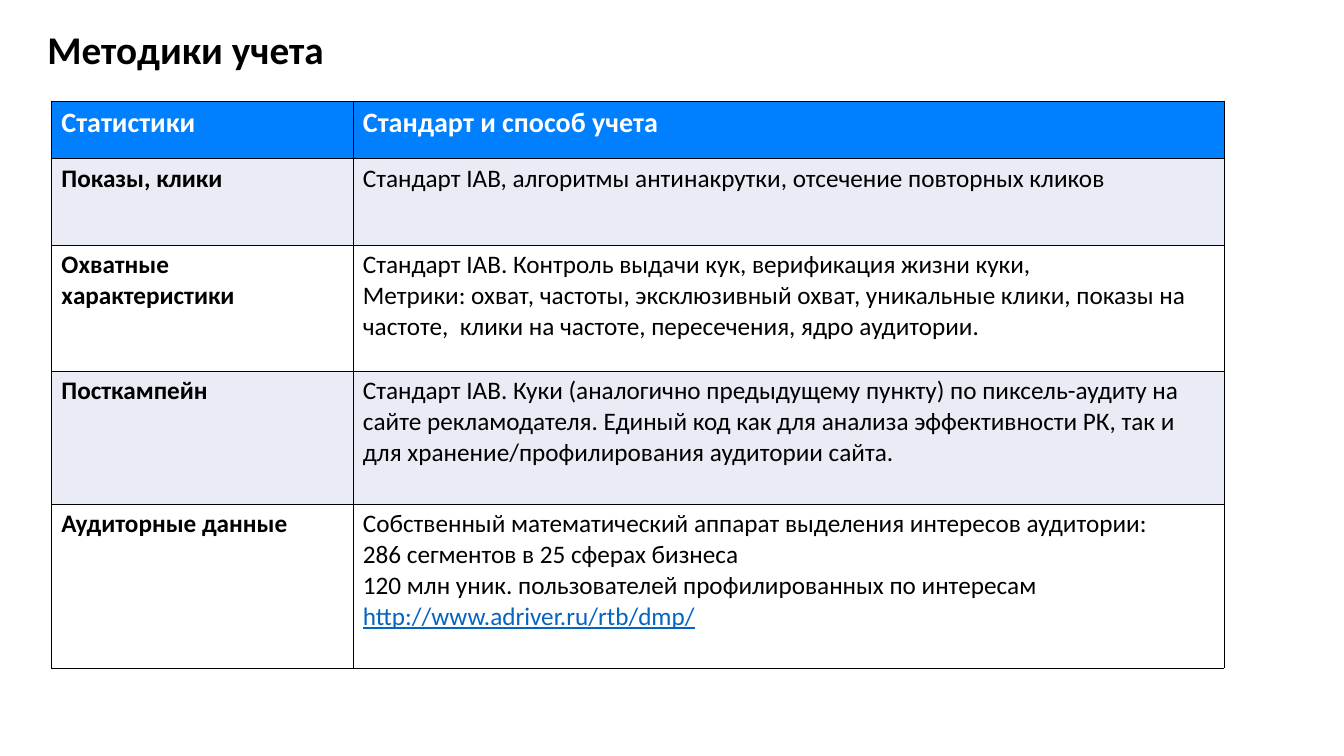
from pptx import Presentation
from pptx.dml.color import RGBColor
from pptx.enum.text import MSO_ANCHOR, PP_ALIGN
from pptx.oxml import parse_xml
from pptx.oxml.ns import nsdecls
from pptx.util import Inches, Pt

FONT = "Calibri"
HUES = {"black": "000000", "white": "FFFFFF", "head": "0080FF",
        "band": "E9EBF5", "link": "0563C1"}
HEAD = ("Статистики", ["Стандарт и способ учета"])
STATS = [
    ("Показы, клики",
     ["Стандарт IAB, алгоритмы антинакрутки, отсечение повторных кликов"]),
    ("Охватные характеристики",
     ["Стандарт IAB. Контроль выдачи кук, верификация жизни куки,",
      "Метрики: охват, частоты, эксклюзивный охват, уникальные клики, показы "
      "на частоте,  клики на частоте, пересечения, ядро аудитории."]),
    ("Посткампейн",
     ["Стандарт IAB. Куки (аналогично предыдущему пункту) по пиксель-аудиту на "
      "сайте рекламодателя. Единый код как для анализа эффективности РК, так и "
      "для хранение/профилирования аудитории сайта."]),
    ("Аудиторные данные",
     ["Собственный математический аппарат выделения интересов аудитории:",
      "286 сегментов в 25 сферах бизнеса",
      "120 млн уник. пользователей профилированных по интересам",
      "http://www.adriver.ru/rtb/dmp/"]),
]
COLS = [2.99, 8.64]
ROWS = [0.57, 0.86, 1.25, 1.32, 1.63]


def add_run(para, text, size, hue, bold=False):
    run = para.add_run()
    run.text = text
    font = run.font
    font.name, font.size, font.bold = FONT, Pt(size), bold
    font.color.rgb = RGBColor.from_string(HUES[hue])
    return run


def add_title(slide, text, left, top, width, height):
    title = slide.shapes.title
    title.left, title.top = Inches(left), Inches(top)
    title.width, title.height = Inches(width), Inches(height)
    frame = title.text_frame
    frame.word_wrap = True
    frame.vertical_anchor = MSO_ANCHOR.MIDDLE
    para = frame.paragraphs[0]
    para.alignment = PP_ALIGN.LEFT
    para.line_spacing = 0.9
    add_run(para, text, 28, "black", True)


def add_edges(cell):
    """Draw a thin black line on each side of the cell."""
    props = cell._tc.get_or_add_tcPr()
    for place, side in enumerate(("lnL", "lnR", "lnT", "lnB")):
        props.insert(place, parse_xml(
            f'<a:{side} {nsdecls("a")} w="{Pt(0.25)}"><a:solidFill>'
            f'<a:srgbClr val="{HUES["black"]}"/></a:solidFill></a:{side}>'))


def fill_cell(cell, lines, fill, size, hue, bold):
    cell.fill.solid()
    cell.fill.fore_color.rgb = RGBColor.from_string(HUES[fill])
    add_edges(cell)
    frame = cell.text_frame
    for i, line in enumerate(lines):
        para = frame.add_paragraph() if i else frame.paragraphs[0]
        link = line.startswith("http")
        run = add_run(para, line, size, "link" if link else hue, bold)
        if link:
            run.font.underline = True


def add_stats(slide, left, top):
    frame = slide.shapes.add_table(
        len(ROWS), len(COLS), Inches(left), Inches(top),
        Inches(sum(COLS)), Inches(sum(ROWS)))
    table = frame.table
    for col, width in zip(table.columns, COLS):
        col.width = Inches(width)
    for row, height in zip(table.rows, ROWS):
        row.height = Inches(height)
    for r, (name, lines) in enumerate([HEAD] + STATS):
        if r == 0:
            fill, size, hue = "head", 20, "white"
        else:
            fill, size, hue = "band" if r % 2 else "white", 18, "black"
        fill_cell(table.cell(r, 0), [name], fill, size, hue, True)
        fill_cell(table.cell(r, 1), lines, fill, size, hue, r == 0)


def main():
    deck = Presentation()
    deck.slide_width, deck.slide_height = Inches(13.33), Inches(7.5)
    slide = deck.slides.add_slide(deck.slide_layouts[5])
    add_title(slide, "Методики учета", 0.37, 0.15, 10, 0.72)
    add_stats(slide, 0.51, 1)
    deck.save("out.pptx")


if __name__ == "__main__":
    main()
